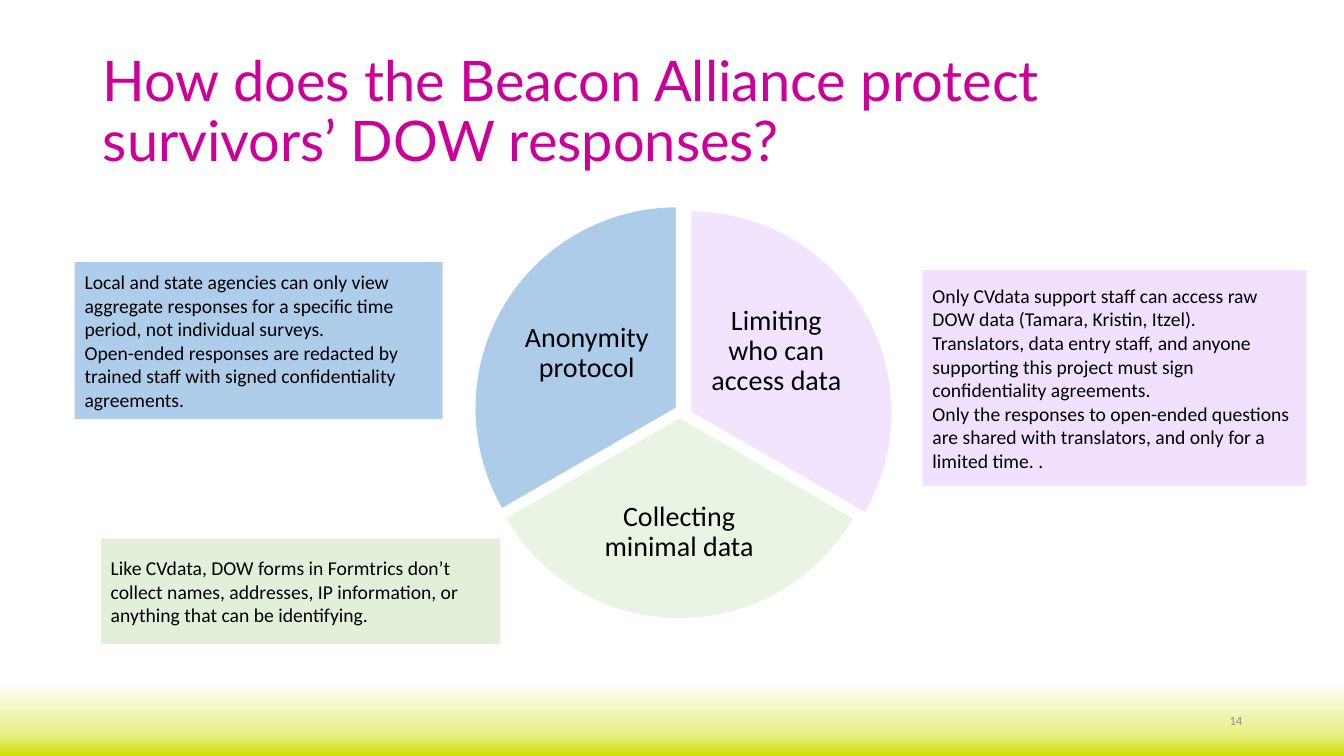
from copy import deepcopy
from dataclasses import dataclass

from lxml import etree
from pptx import Presentation
from pptx.dml.color import RGBColor
from pptx.enum.shapes import MSO_SHAPE
from pptx.enum.text import MSO_ANCHOR, MSO_AUTO_SIZE, PP_ALIGN
from pptx.oxml.ns import qn
from pptx.util import Inches, Pt

RECTANGLE, PIE = MSO_SHAPE.RECTANGLE, MSO_SHAPE.PIE
MIDDLE, NO_FIT = MSO_ANCHOR.MIDDLE, MSO_AUTO_SIZE.NONE
LEFT, CENTER, RIGHT = PP_ALIGN.LEFT, PP_ALIGN.CENTER, PP_ALIGN.RIGHT


@dataclass(frozen=True)
class Theme:
    """Colours, fonts and type sizes of the deck."""
    title_font: str = "Lato"
    body_font: str = "Calibri"
    title_size: int = 40
    label_size: int = 20
    note_size: int = 14
    number_size: int = 9
    magenta: str = "CC0099"
    black: str = "000000"
    white: str = "FFFFFF"
    grey: str = "8C8C8C"
    lilac: str = "F1E1FF"
    green: str = "E2F0D9"
    blue: str = "5B9BD5"
    pale_blue: str = "ADCDEA"
    band: tuple = ((0, "FFFFFF"), (0.73, "E6EF80"), (1, "CDDE01"))


THEME = Theme()
WIDTH, HEIGHT = 13.33, 7.5
PIE_SIZE = 4
ANGLE_UNIT = 0.6

SLICES = (
    ("Limiting who can access data", (270, 30), (0.14, 0.04), (2.31, 0.77, 1.36, 1.33), THEME.lilac, 90),
    ("Collecting minimal data", (30, 150), (0.03, 0.09), (1.12, 2.61, 1.81, 1.24), THEME.green, 70),
    ("Anonymity protocol", (150, 270), (0, 0), (0.43, 0.79, 1.36, 1.33), THEME.blue, 50),
)
NOTES = (
    ((0.74, 2.6, 3.65, 1.56), THEME.pale_blue, (
        "Local and state agencies can only view aggregate responses for a specific time period, "
        "not individual surveys.",
        "Open-ended responses are redacted by trained staff with signed confidentiality agreements.",
    )),
    ((9.15, 2.68, 3.81, 2.14), THEME.lilac, (
        "Only CVdata support staff can access raw DOW data (Tamara, Kristin, Itzel).",
        "Translators, data entry staff, and anyone supporting this project must sign "
        "confidentiality agreements.",
        "Only the responses to open-ended questions are shared with translators, and only for a "
        "limited time. .",
    )),
    ((1, 5.34, 3.96, 1.05), THEME.green, (
        "Like CVdata, DOW forms in Formtrics don’t collect names, addresses, IP information, or "
        "anything that can be identifying.",
    )),
)


def inches(box):
    """Turn a sequence of inch values into lengths."""
    return [Inches(value) for value in box]


def write(shape, lines, size, color=THEME.black, font=THEME.body_font, align=LEFT, spacing=1.0, inset=None):
    """Fill a shape with formatted paragraphs."""
    frame = shape.text_frame
    frame_format = {"word_wrap": True, "auto_size": NO_FIT, "vertical_anchor": MIDDLE}
    if inset is not None:
        sides = ("left", "top", "right", "bottom")
        frame_format.update({f"margin_{side}": Inches(inset) for side in sides})
    for name, value in frame_format.items():
        setattr(frame, name, value)
    for index, line in enumerate(lines):
        para = frame.add_paragraph() if index else frame.paragraphs[0]
        for name, value in {"alignment": align, "line_spacing": spacing}.items():
            setattr(para, name, value)
        span = para.add_run()
        span.text = line
        for name, value in {"name": font, "size": Pt(size)}.items():
            setattr(span.font, name, value)
        span.font.color.rgb = RGBColor.from_string(color)


def add_panel(shapes, kind, box, color):
    """Add a flat filled shape without line or shadow."""
    panel = shapes.add_shape(kind, *inches(box))
    panel.shadow.inherit = False
    panel.fill.solid()
    panel.fill.fore_color.rgb = RGBColor.from_string(color)
    panel.line.fill.background()
    return panel


def add_band(page, box):
    """Add the gradient band along the foot of the page."""
    band = add_panel(page.shapes, RECTANGLE, box, THEME.white)
    band.fill.gradient()
    band.fill.gradient_angle = 270
    stop_list = band.fill._fill._gradFill.find(qn("a:gsLst"))
    stop_list.insert(1, deepcopy(stop_list[0]))
    for stop, (position, color) in zip(band.fill.gradient_stops, THEME.band):
        stop.position = position
        stop.color.rgb = RGBColor.from_string(color)


def add_title(page, box, text):
    """Move the title placeholder into its box and write it."""
    title = page.shapes.title
    for name, value in zip(("left", "top", "width", "height"), inches(box)):
        setattr(title, name, value)
    write(title, [text], THEME.title_size, THEME.magenta, THEME.title_font, spacing=0.9)


def add_pie(page, left, top):
    """Add the three spread slices and their labels as one group."""
    shapes = page.shapes.add_group_shape().shapes
    for text, angles, (across, down), (x, y, width, height), color, opacity in SLICES:
        wedge = add_panel(shapes, PIE, (left + across, top + down, PIE_SIZE, PIE_SIZE), color)
        for index, angle in enumerate(angles):
            wedge.adjustments[index] = angle * ANGLE_UNIT
        fill_color = wedge.fill._xPr.find(qn("a:solidFill"))[0]
        etree.SubElement(fill_color, qn("a:alpha"), val=str(opacity * 1000))
        wedge.line.color.rgb = RGBColor.from_string(THEME.white)
        wedge.line.width = Pt(1)
        label = shapes.add_textbox(*inches((left + x, top + y, width, height)))
        write(label, [text], THEME.label_size, align=CENTER, spacing=0.9, inset=0.03)


def add_notes(page):
    """Add the coloured explanations around the pie."""
    for box, color, lines in NOTES:
        write(add_panel(page.shapes, RECTANGLE, box, color), lines, THEME.note_size)


def add_page_number(page, box, number):
    """Add the page number at the lower right."""
    write(page.shapes.add_textbox(*inches(box)), [number], THEME.number_size, THEME.grey, align=RIGHT)


def main():
    """Build and save the deck."""
    deck = Presentation()
    deck.slide_width, deck.slide_height = inches((WIDTH, HEIGHT))
    page = deck.slides.add_slide(deck.slide_layouts[5])
    add_band(page, (0, 6.76, WIDTH, HEIGHT - 6.76))
    add_title(page, (0.92, 0.4, 11.5, 1.45), "How does the Beacon Alliance protect survivors’ DOW responses?")
    add_pie(page, 4.71, 2.05)
    add_page_number(page, (9.42, 6.95, 3, 0.4), "14")
    add_notes(page)
    deck.save("out.pptx")


if __name__ == "__main__":
    main()
